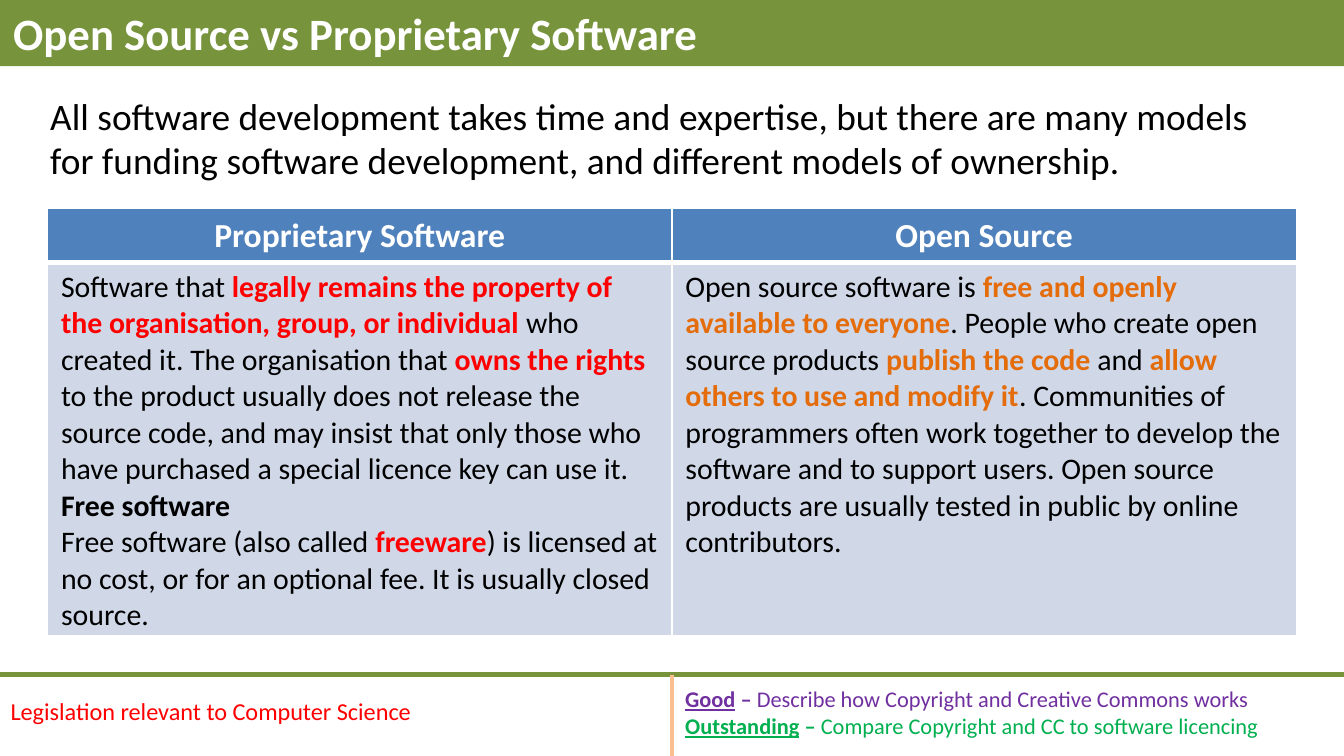
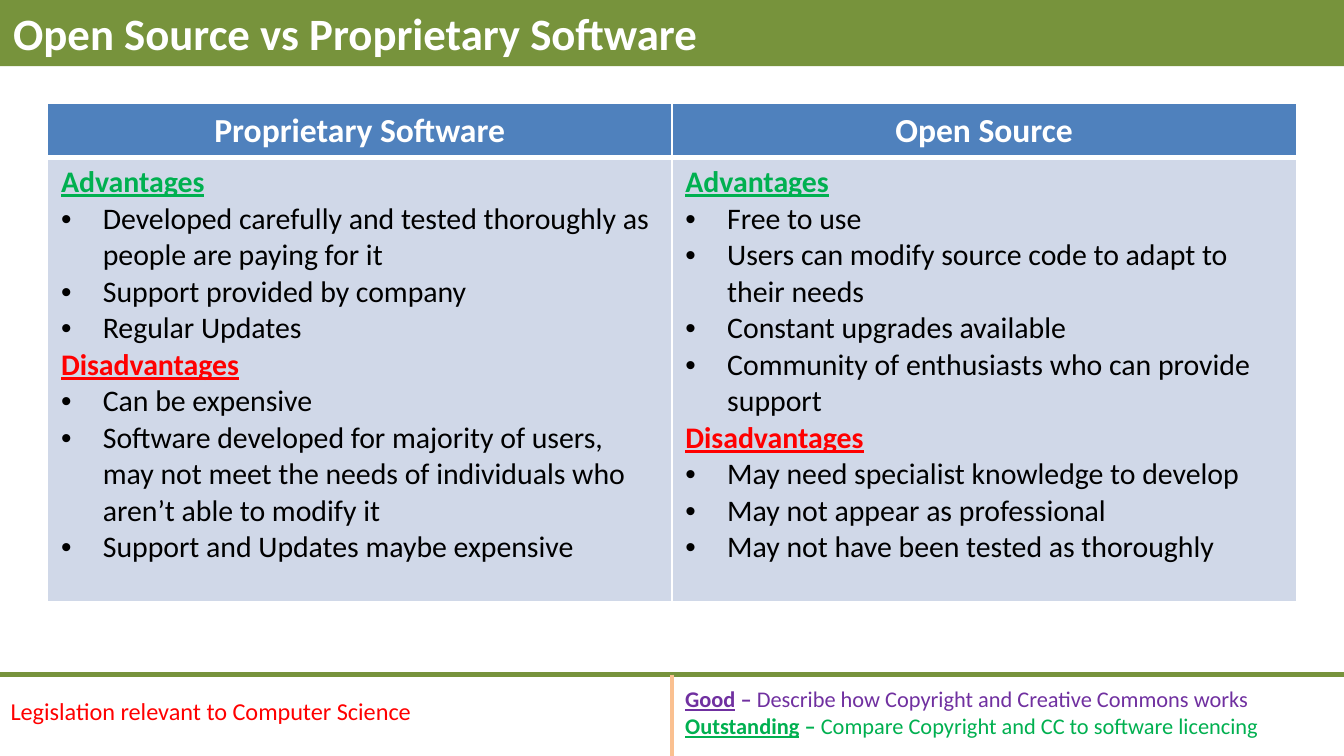
import pptx
import pptx.util
import pptx.dml.color
import pptx.enum.shapes
import pptx.enum.text
import pptx.oxml.ns
import lxml.etree
from dataclasses import dataclass

Cm, Pt = pptx.util.Cm, pptx.util.Pt
ALIGN, ANCHOR = pptx.enum.text.PP_ALIGN, pptx.enum.text.MSO_ANCHOR

TITLE = "Open Source vs Proprietary Software"
TOPIC = [[("Legislation relevant to Computer Science", "topic")]]
GOALS = [
    [("Good", "good_key"), (" – ", "good_dash"),
     ("Describe how Copyright and Creative Commons works", "good")],
    [("Outstanding", "top_key"), (" – ", "top_dash"),
     ("Compare Copyright and CC to software licencing", "top")],
]
INTRO = [[("All software development takes time and expertise, but there are many models "
           "for funding software development, and different models of ownership.", "intro")]]
HEADINGS = ["Proprietary Software", "Open Source"]
DEFINITIONS = [
    [
        [("Software that ", "cell"),
         ("legally remains the property of the organisation, group, or individual", "red"),
         (" who created it. The organisation that ", "cell"),
         ("owns the rights ", "red"),
         ("to the product usually does not release the source code, and may insist that "
          "only those who have purchased a special licence key can use it.", "cell")],
        [("Free software", "strong")],
        [("Free software (also called ", "cell"), ("freeware", "red"),
         (") is licensed at no cost, or for an optional fee. It is usually closed source.", "cell")],
    ],
    [
        [("Open source software is ", "cell"),
         ("free and openly available to everyone", "orange"),
         (". People who create open source products ", "cell"),
         ("publish the code", "orange"), (" and ", "cell"),
         ("allow others to use and modify it", "orange"),
         (". Communities of programmers often work together to develop the software and to "
          "support users. Open source products are usually tested in public by online "
          "contributors.", "cell")],
    ],
]
PROS_CONS = [
    {"Advantages": ["Developed carefully and tested thoroughly as people are paying for it",
                    "Support provided by company",
                    "Regular Updates"],
     "Disadvantages": ["Can be expensive",
                       "Software developed for majority of users, may not meet the needs of "
                       "individuals who aren’t able to modify it",
                       "Support and Updates maybe expensive"]},
    {"Advantages": ["Free to use",
                    "Users can modify source code to adapt to their needs",
                    "Constant upgrades available",
                    "Community of enthusiasts who can provide support"],
     "Disadvantages": ["May need specialist knowledge to develop",
                       "May not appear as professional",
                       "May not have been tested as thoroughly"]},
]


@dataclass(frozen=True)
class Theme:
    font: str = "Calibri"
    band: str = "77933C"
    divider: str = "FAC090"
    header: str = "4F81BD"
    body: str = "D0D8E8"
    white: str = "FFFFFF"
    black: str = "000000"
    red: str = "FF0000"
    orange: str = "E46C0A"
    green: str = "00B050"
    purple: str = "7030A0"
    title_pt: int = 24
    intro_pt: int = 20
    header_pt: int = 18
    cell_pt: int = 16
    topic_pt: int = 13
    goal_pt: int = 12


T = Theme()
STYLES = {
    name: dict(size=Pt(size), color=color, bold=bold, underline=underline)
    for name, size, color, bold, underline in [
        ("title", T.title_pt, T.white, True, False),
        ("intro", T.intro_pt, T.black, False, False),
        ("header", T.header_pt, T.white, True, False),
        ("cell", T.cell_pt, T.black, False, False),
        ("strong", T.cell_pt, T.black, True, False),
        ("red", T.cell_pt, T.red, True, False),
        ("orange", T.cell_pt, T.orange, True, False),
        ("Advantages", T.cell_pt, T.green, True, True),
        ("Disadvantages", T.cell_pt, T.red, True, True),
        ("topic", T.topic_pt, T.red, False, False),
        ("good_key", T.goal_pt, T.purple, True, True),
        ("good_dash", T.goal_pt, T.purple, True, False),
        ("good", T.goal_pt, T.purple, False, False),
        ("top_key", T.goal_pt, T.green, True, True),
        ("top_dash", T.goal_pt, T.green, True, False),
        ("top", T.goal_pt, T.green, False, False),
    ]
}

WIDTH, HEIGHT = Cm(25.4), Cm(14.29)
FOOTER_TOP = Cm(12.75)
TABLE_LEFT = Cm(0.9)
HEADER_HEIGHT = Cm(1)
BULLET_INDENT = Cm(0.79)


def rgb(color):
    return pptx.dml.color.RGBColor.from_string(color)


def add_element(parent, tag, **attrs):
    return lxml.etree.SubElement(parent, pptx.oxml.ns.qn(tag), attrs)


def write(tf, paragraphs, align=ALIGN.LEFT):
    for i, runs in enumerate(paragraphs):
        p = tf.paragraphs[0] if i == 0 else tf.add_paragraph()
        p.alignment = align
        for text, style in runs:
            r = p.add_run()
            r.text = text
            r.font.name = T.font
            for key, value in STYLES[style].items():
                if key == "color":
                    r.font.color.rgb = rgb(value)
                else:
                    setattr(r.font, key, value)


def add_text(s, box, paragraphs):
    tf = s.shapes.add_textbox(*box).text_frame
    tf.word_wrap = True
    write(tf, paragraphs)


def add_line(s, x1, y1, x2, y2, color):
    line = s.shapes.add_connector(pptx.enum.shapes.MSO_CONNECTOR.STRAIGHT, x1, y1, x2, y2)
    line.line.color.rgb = rgb(color)
    line.line.width = Pt(2.25)
    add_element(line._element.spPr, "a:effectLst")


def add_bullet(p):
    pPr = p._p.get_or_add_pPr()
    pPr.set("marL", str(BULLET_INDENT))
    pPr.set("indent", str(-BULLET_INDENT))
    add_element(pPr, "a:buFont", typeface="Arial")
    add_element(pPr, "a:buChar", char="•")


def style_cell(cell, color, borders):
    tcPr = cell._tc.get_or_add_tcPr()
    for side, width in borders.items():
        ln = add_element(tcPr, f"a:ln{side}", w=str(Pt(width)))
        add_element(add_element(ln, "a:solidFill"), "a:srgbClr", val=T.white)
    cell.fill.solid()
    cell.fill.fore_color.rgb = rgb(color)


def add_comparison(s, top, body_height, columns):
    width = WIDTH - 2 * TABLE_LEFT
    table = s.shapes.add_table(2, len(HEADINGS), TABLE_LEFT, top, width,
                               HEADER_HEIGHT + body_height).table
    table.horz_banding = False
    table.rows[0].height, table.rows[1].height = HEADER_HEIGHT, body_height
    for i, (heading, paragraphs) in enumerate(zip(HEADINGS, columns)):
        table.columns[i].width = width // len(HEADINGS)
        head, body = table.cell(0, i), table.cell(1, i)
        style_cell(head, T.header, dict(L=1, R=1, T=1, B=3))
        style_cell(body, T.body, dict(L=1, R=1, T=3, B=1))
        write(head.text_frame, [[(heading, "header")]], ALIGN.CENTER)
        write(body.text_frame, paragraphs)
    return table


def add_slide(prs):
    s = prs.slides.add_slide(prs.slide_layouts[6])
    add_line(s, 0, FOOTER_TOP, WIDTH, FOOTER_TOP, T.band)
    add_text(s, (Cm(-0.05), Cm(13.03), Cm(12.5), Cm(0.81)), TOPIC)
    add_text(s, (WIDTH // 2, Cm(12.83), WIDTH // 2, Cm(1.27)), GOALS)
    add_line(s, WIDTH // 2, FOOTER_TOP, WIDTH // 2, HEIGHT, T.divider)
    sp = s.shapes.add_shape(pptx.enum.shapes.MSO_SHAPE.RECTANGLE, 0, Cm(-0.02), WIDTH, Cm(1.27))
    sp.shadow.inherit = False
    sp.fill.solid()
    sp.fill.fore_color.rgb = rgb(T.band)
    sp.line.fill.background()
    sp.text_frame.vertical_anchor = ANCHOR.MIDDLE
    write(sp.text_frame, [[(TITLE, "title")]])
    return s


def add_definitions(prs):
    s = add_slide(prs)
    add_text(s, (Cm(0.7), Cm(1.63), Cm(24), Cm(2)), INTRO)
    add_comparison(s, Cm(3.94), Cm(7.06), DEFINITIONS)


def add_pros_cons(prs):
    columns = [
        [line for label, points in groups.items()
         for line in [[(label, label)]] + [[(point, "cell")] for point in points]]
        for groups in PROS_CONS
    ]
    table = add_comparison(add_slide(prs), Cm(1.96), Cm(8.4), columns)
    for i, groups in enumerate(PROS_CONS):
        for p in table.cell(1, i).text_frame.paragraphs:
            if p.text not in groups:
                add_bullet(p)


def main():
    prs = pptx.Presentation()
    prs.slide_width, prs.slide_height = WIDTH, HEIGHT
    add_definitions(prs)
    add_pros_cons(prs)
    prs.save("out.pptx")


if __name__ == "__main__":
    main()
